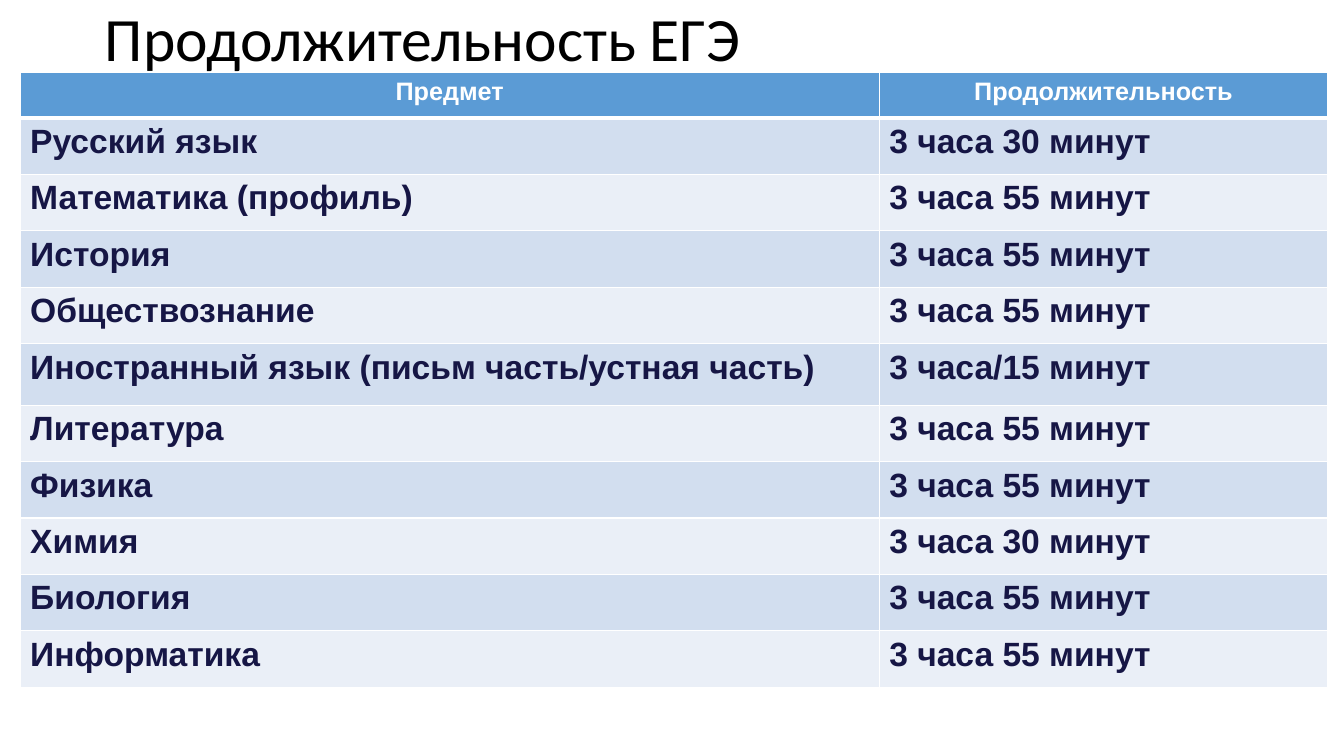
from lxml import etree
from pptx import Presentation
from pptx.dml.color import RGBColor
from pptx.enum.text import MSO_ANCHOR, PP_ALIGN
from pptx.oxml.ns import qn
from pptx.util import Inches, Pt

# Content
TITLE = "Продолжительность ЕГЭ"
HEADER = ("Предмет", "Продолжительность")
EXAMS = [
    ("Русский язык", "3 часа 30 минут"),
    ("Математика (профиль)", "3 часа 55 минут"),
    ("История", "3 часа 55 минут"),
    ("Обществознание", "3 часа 55 минут"),
    ("Иностранный язык (письм часть/устная часть)", "3 часа/15 минут"),
    ("Литература", "3 часа 55 минут"),
    ("Физика", "3 часа 55 минут"),
    ("Химия", "3 часа 30 минут"),
    ("Биология", "3 часа 55 минут"),
    ("Информатика", "3 часа 55 минут"),
]

# Style
BLACK = RGBColor(0x00, 0x00, 0x00)
WHITE = RGBColor(0xFF, 0xFF, 0xFF)
NAVY = RGBColor(0x16, 0x16, 0x45)
HEADER_BLUE = RGBColor(0x5B, 0x9B, 0xD5)
BANDS = (RGBColor(0xD2, 0xDE, 0xEF), RGBColor(0xEA, 0xEF, 0xF7))
LEFT, CENTER = PP_ALIGN.LEFT, PP_ALIGN.CENTER
MIDDLE = MSO_ANCHOR.MIDDLE

# Layout in inches
COLUMN_WIDTHS = (8.52, 4.45)
HEADER_HEIGHT, ROW_HEIGHT, LANGUAGE_HEIGHT = 0.45, 0.56, 0.61
LANGUAGE_ROW = 5


def add_run(paragraph, text, size, font, color, bold=False):
    run = paragraph.add_run()
    run.text = text
    run.font.size = Pt(size)
    run.font.name = font
    run.font.bold = bold
    run.font.color.rgb = color


def set_borders(cell, widths):
    properties = cell._tc.get_or_add_tcPr()
    for side, width in widths.items():
        line = etree.SubElement(properties, qn(f"a:ln{side}"), w=str(Pt(width)))
        fill = etree.SubElement(line, qn("a:solidFill"))
        etree.SubElement(fill, qn("a:srgbClr"), val=str(WHITE))


def add_title(slide):
    title = slide.shapes.title
    title.left, title.top = Inches(0.94), Inches(0)
    title.width, title.height = Inches(11.5), Inches(0.82)
    title.text_frame.vertical_anchor = MIDDLE
    paragraph = title.text_frame.paragraphs[0]
    paragraph.alignment = LEFT
    paragraph.line_spacing = 0.9
    add_run(paragraph, TITLE, 44, "Calibri", BLACK)


def add_schedule(slide):
    rows = [HEADER, *EXAMS]
    heights = [ROW_HEIGHT] * len(rows)
    heights[0] = HEADER_HEIGHT
    heights[LANGUAGE_ROW] = LANGUAGE_HEIGHT
    table = slide.shapes.add_table(
        len(rows), len(HEADER), Inches(0.2), Inches(0.72),
        Inches(sum(COLUMN_WIDTHS)), Inches(sum(heights))).table
    for column, width in zip(table.columns, COLUMN_WIDTHS):
        column.width = Inches(width)

    for row_index, texts in enumerate(rows):
        table.rows[row_index].height = Inches(heights[row_index])
        is_header = row_index == 0
        # A thick rule separates the header from the exams
        borders = {"L": 1, "R": 1, "T": 3 if row_index == 1 else 1,
                   "B": 3 if is_header else 1}
        for column_index, text in enumerate(texts):
            cell = table.cell(row_index, column_index)
            set_borders(cell, borders)
            cell.fill.solid()
            cell.fill.fore_color.rgb = (
                HEADER_BLUE if is_header else BANDS[(row_index - 1) % 2])
            paragraph = cell.text_frame.paragraphs[0]
            paragraph.alignment = CENTER if is_header else LEFT
            add_run(paragraph, text, 18 if is_header else 24, "Arial",
                    WHITE if is_header else NAVY, bold=True)


def main():
    presentation = Presentation()
    presentation.slide_width = Inches(13.33)
    presentation.slide_height = Inches(7.5)
    title_only = presentation.slide_layouts[5]
    slide = presentation.slides.add_slide(title_only)
    add_title(slide)
    add_schedule(slide)
    presentation.save("out.pptx")


if __name__ == "__main__":
    main()
